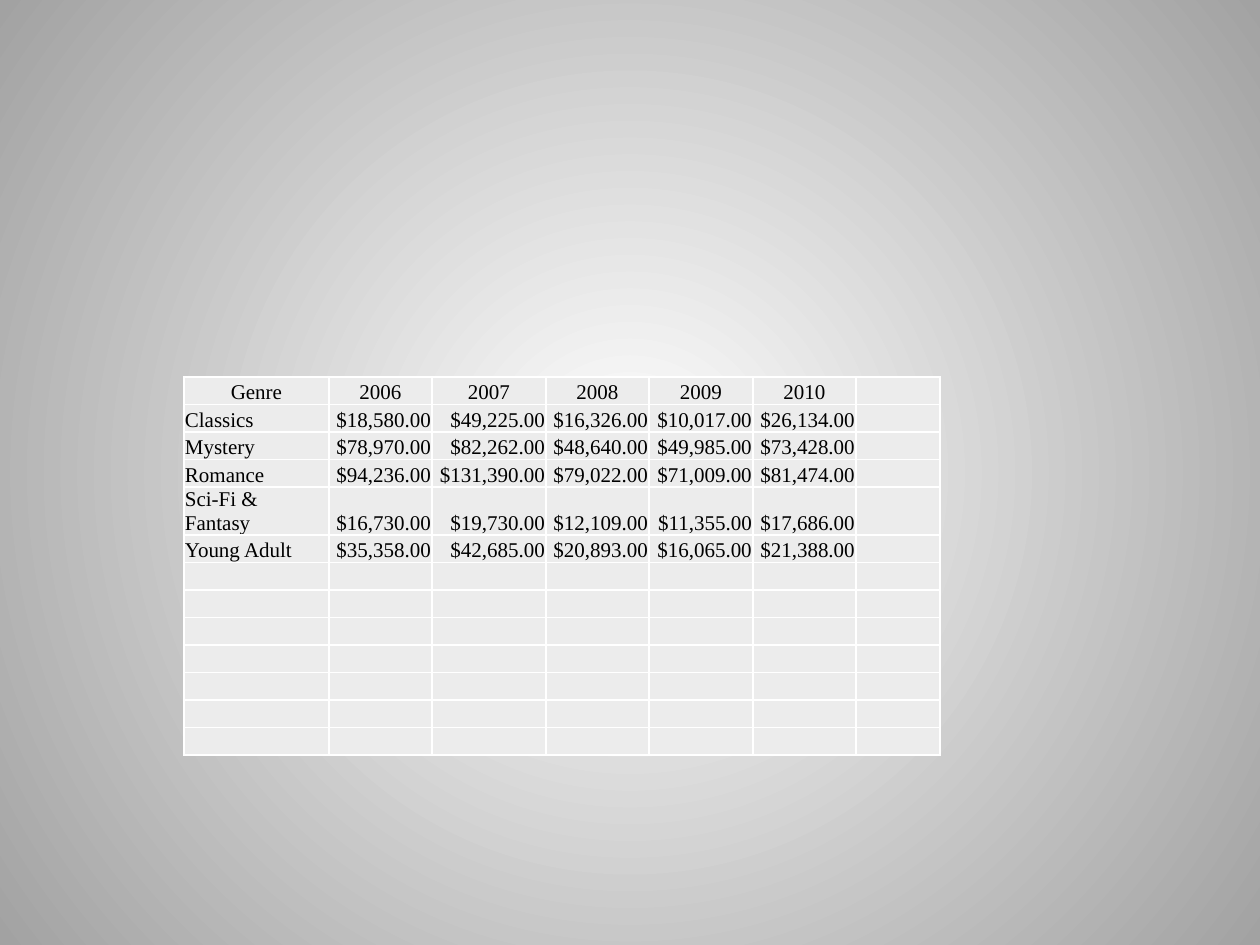
import pptx
import pptx.util
import pptx.dml.color
import pptx.enum.text
import pptx.oxml.ns
from lxml import etree

PX = 914400 // 126  # EMU per px
WHITE = pptx.dml.color.RGBColor(0xFF, 0xFF, 0xFF)
EDGE = pptx.dml.color.RGBColor(0xA2, 0xA2, 0xA2)
CELL = pptx.dml.color.RGBColor(0xEC, 0xEC, 0xEC)
BLACK = pptx.dml.color.RGBColor(0, 0, 0)
qn = pptx.oxml.ns.qn
ALIGN = pptx.enum.text.PP_ALIGN

SALES = [
    ["Genre", "2006", "2007", "2008", "2009", "2010"],
    ["Classics", 18580, 49225, 16326, 10017, 26134],
    ["Mystery", 78970, 82262, 48640, 49985, 73428],
    ["Romance", 94236, 131390, 79022, 71009, 81474],
    ["Sci-Fi & Fantasy", 16730, 19730, 12109, 11355, 17686],
    ["Young Adult", 35358, 42685, 20893, 16065, 21388],
]
ROWS = 13
WIDTHS = [145, 103, 114, 103, 104, 103, 84]


def add_borders(cell):
    tcPr = cell._tc.get_or_add_tcPr()
    for i, side in enumerate(("a:lnL", "a:lnR", "a:lnT", "a:lnB")):
        ln = etree.Element(qn(side), w=str(pptx.util.Pt(1)))
        fill = etree.SubElement(ln, qn("a:solidFill"))
        etree.SubElement(fill, qn("a:srgbClr"), val=str(WHITE))
        tcPr.insert(i, ln)


prs = pptx.Presentation()
prs.slide_width = pptx.util.Inches(10)
prs.slide_height = pptx.util.Inches(7.5)
s = prs.slides.add_slide(prs.slide_layouts[6])

# Background: circular gradient from the centre
bg = s.background.fill
bg.gradient()
for stop, color, position in zip(bg.gradient_stops, (WHITE, EDGE), (0, 1)):
    stop.color.rgb = color
    stop.position = position
grad = s._element.find(".//" + qn("a:gradFill"))
grad.remove(grad.find(qn("a:lin")))
circle = etree.Element(qn("a:path"), {"path": "circle"})
etree.SubElement(circle, qn("a:fillToRect"), l="50000", t="50000", r="50000", b="50000")
grad.find(qn("a:gsLst")).addnext(circle)

# Sales table
table = s.shapes.add_table(ROWS, len(WIDTHS), 184 * PX, 377 * PX,
                           sum(WIDTHS) * PX, 358 * PX).table
table.first_row = False
table.horz_banding = False
for column, width in zip(table.columns, WIDTHS):
    column.width = width * PX

for row in range(ROWS):
    for col in range(len(WIDTHS)):
        cell = table.cell(row, col)
        cell.fill.solid()
        cell.fill.fore_color.rgb = CELL
        add_borders(cell)
        cell.margin_left = cell.margin_right = cell.margin_top = PX
        cell.margin_bottom = 0
        cell.vertical_anchor = pptx.enum.text.MSO_ANCHOR.BOTTOM
        p = cell.text_frame.paragraphs[0]
        if row >= len(SALES) or col >= len(SALES[row]):
            # Small text size keeps the empty rows low
            etree.SubElement(p._p, qn("a:endParaRPr"), sz="1200")
            continue
        value = SALES[row][col]
        if row == 0:
            p.alignment = ALIGN.CENTER
        elif col > 0:
            p.alignment = ALIGN.RIGHT
        r = p.add_run()
        r.text = value if isinstance(value, str) else f"${value:,.2f}"
        r.font.name = "Times New Roman"
        r.font.size = pptx.util.Pt(12)
        r.font.color.rgb = BLACK

prs.save("out.pptx")
